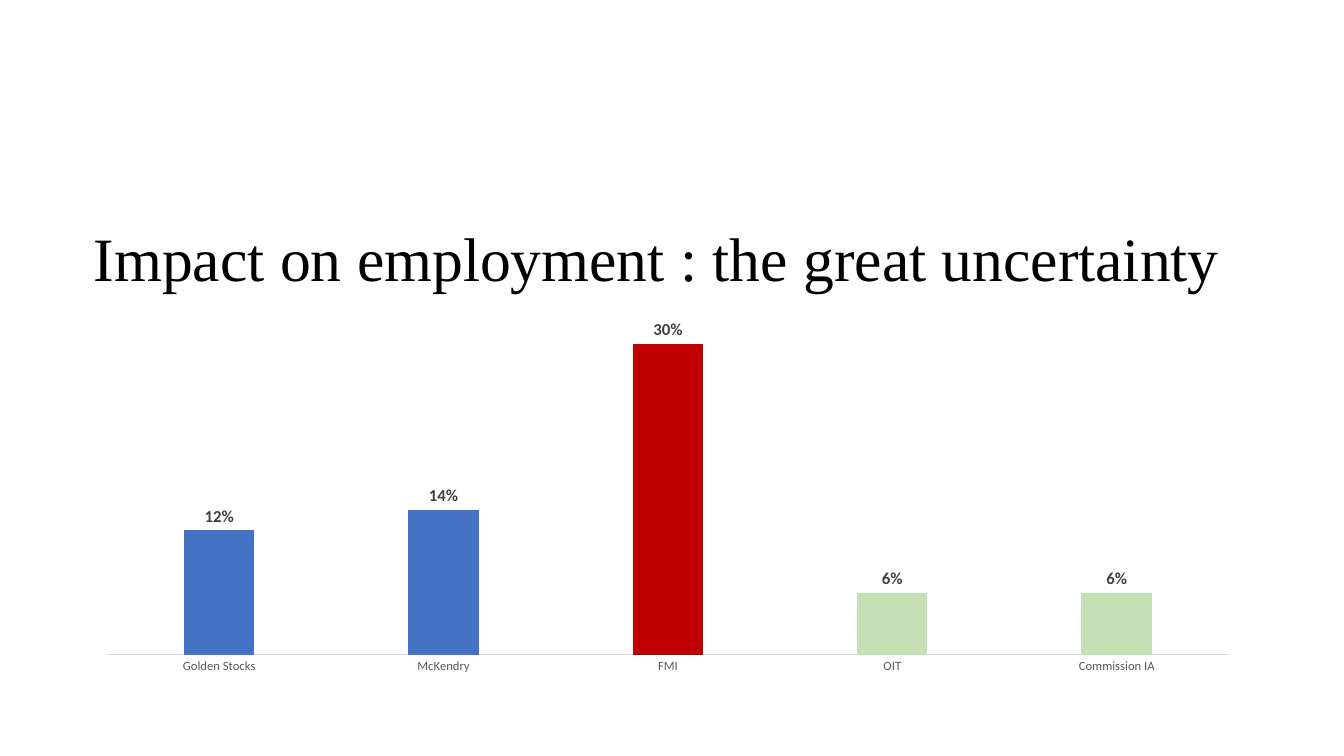
import pptx
import pptx.chart.data
import pptx.dml.color
import pptx.enum.chart
import pptx.enum.text
import pptx.util
from dataclasses import dataclass

# Content
TITLE = "Impact on employment : the great uncertainty"
SERIES = "Series 1"
ESTIMATES = [  # source, share of jobs, colour role
    ("Golden Stocks", 0.12, "private"),
    ("McKendry", 0.14, "private"),
    ("FMI", 0.30, "highest"),
    ("OIT", 0.06, "lowest"),
    ("Commission IA", 0.06, "lowest"),
]


@dataclass(frozen=True)
class Theme:
    title_font: str = "Times New Roman"
    chart_font: str = "Calibri"
    title_size: int = 44
    chart_size: int = 10
    axis_size: int = 9
    label_size: int = 12
    black: str = "000000"
    axis_text: str = "595959"
    label_text: str = "404040"
    axis_line: str = "D9D9D9"
    private: str = "4472C4"
    highest: str = "C00000"
    lowest: str = "C5E0B4"


theme = Theme()


def rgb(value):
    return pptx.dml.color.RGBColor.from_string(value)


def format_font(font, size, color, name=theme.chart_font, bold=False):
    font.size = pptx.util.Pt(size)
    font.color.rgb = rgb(color)
    font.name = name
    font.bold = bold


def write_text(tf, text, line_spacing=1.0, **font_format):
    p = tf.paragraphs[0]
    p.alignment = pptx.enum.text.PP_ALIGN.LEFT
    p.line_spacing = line_spacing
    r = p.add_run()
    r.text = text
    format_font(r.font, **font_format)


def add_title(s, box):
    sp = s.shapes.title
    sp.left, sp.top, sp.width, sp.height = box
    tf = sp.text_frame
    tf.word_wrap = True
    tf.auto_size = pptx.enum.text.MSO_AUTO_SIZE.NONE
    tf.vertical_anchor = pptx.enum.text.MSO_ANCHOR.MIDDLE
    write_text(tf, TITLE, line_spacing=0.9, size=theme.title_size,
               color=theme.black, name=theme.title_font)


def add_estimates_chart(s, box):
    names, shares, roles = zip(*ESTIMATES)
    data = pptx.chart.data.CategoryChartData(number_format="0%")
    data.categories = names
    data.add_series(SERIES, shares)
    kind = pptx.enum.chart.XL_CHART_TYPE.COLUMN_CLUSTERED
    chart = s.shapes.add_chart(kind, *box, data).chart
    chart.has_title = False
    chart.has_legend = False
    format_font(chart.font, theme.chart_size, theme.black)

    # Axes
    axis = chart.category_axis
    axis.major_tick_mark = pptx.enum.chart.XL_TICK_MARK.NONE
    axis.format.line.color.rgb = rgb(theme.axis_line)
    axis.format.line.width = pptx.util.Pt(0.75)
    format_font(axis.tick_labels.font, theme.axis_size, theme.axis_text)
    values = chart.value_axis
    values.visible = False
    values.has_major_gridlines = False
    values.minimum_scale, values.maximum_scale = 0, 0.35

    # Columns
    plot = chart.plots[0]
    plot.gap_width, plot.overlap = 219, -27
    plot.vary_by_categories = False
    columns = plot.series[0]
    columns.invert_if_negative = False
    columns.format.fill.solid()
    columns.format.fill.fore_color.rgb = rgb(theme.private)
    for i, role in enumerate(roles):
        if role != "private":
            fill = columns.points[i].format.fill
            fill.solid()
            fill.fore_color.rgb = rgb(getattr(theme, role))

    # Value labels
    labels = columns.data_labels
    labels.show_value = True
    labels.number_format = "0%"
    labels.number_format_is_linked = False
    labels.position = pptx.enum.chart.XL_LABEL_POSITION.OUTSIDE_END
    format_font(labels.font, theme.label_size, theme.label_text, bold=True)


def main():
    prs = pptx.Presentation()
    prs.slide_width = pptx.util.Inches(13.33)
    prs.slide_height = pptx.util.Inches(7.5)
    s = prs.slides.add_slide(prs.slide_layouts[5])

    # Title and chart share one column between equal-looking margins
    left, width = pptx.util.Inches(0.83), pptx.util.Inches(11.59)
    add_title(s, (left, pptx.util.Inches(2.17), width, pptx.util.Inches(0.85)))
    add_estimates_chart(
        s, (left, pptx.util.Inches(2.82), width, pptx.util.Inches(3.94)))
    prs.save("out.pptx")


if __name__ == "__main__":
    main()
